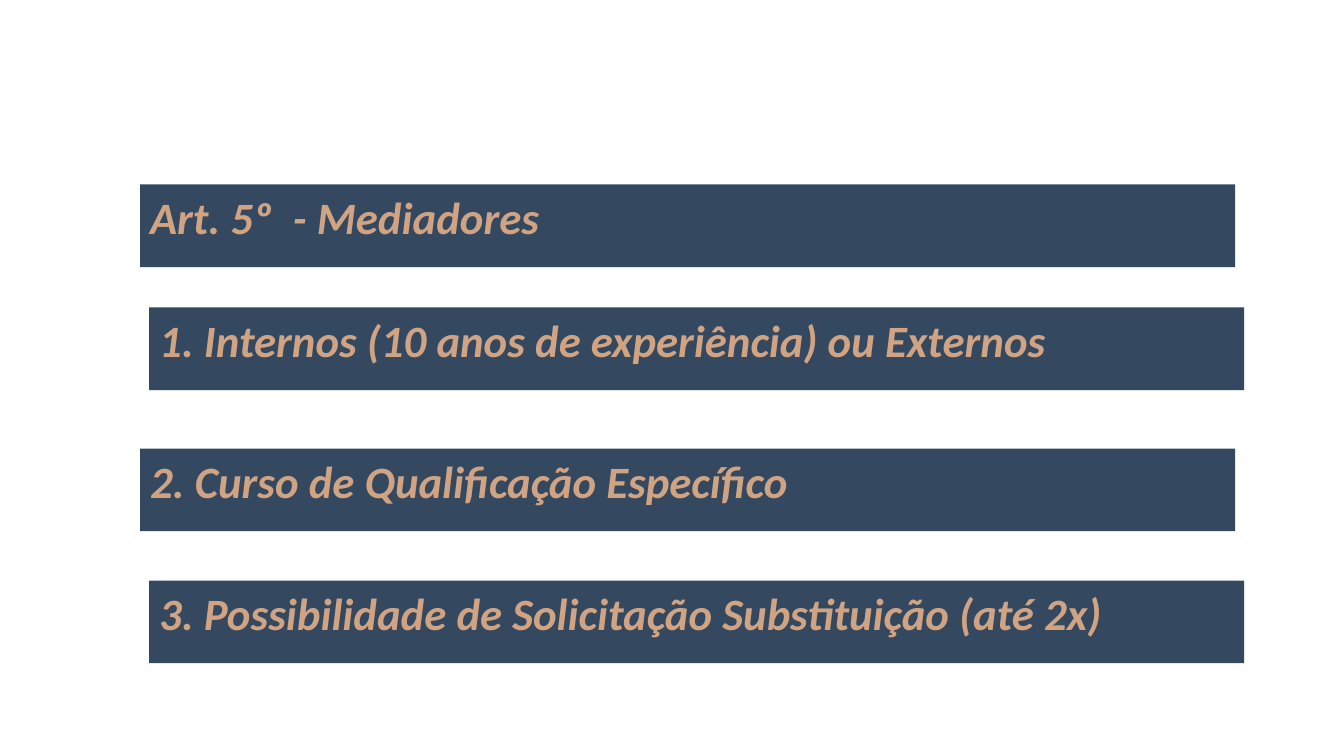
from lxml import etree
from pptx import Presentation
from pptx.dml.color import RGBColor
from pptx.enum.shapes import MSO_SHAPE
from pptx.enum.text import MSO_ANCHOR, PP_ALIGN
from pptx.oxml.ns import qn
from pptx.util import Emu, Pt

RECTANGLE = MSO_SHAPE.RECTANGLE
TOP = MSO_ANCHOR.TOP
LEFT = PP_ALIGN.LEFT
EMU_PER_PX = 9144  # 100 px to the inch


def px(length):
    return Emu(length * EMU_PER_PX)


def rgb(value):
    return RGBColor.from_string(value)


class ArticleSlide:
    FONT, SIZE = "Calibri", 32
    NAVY, SAND = "0B233F", "D0A482"
    OPACITY = 83

    def __init__(self, presentation):
        blank = presentation.slide_layouts[6]
        self.slide = presentation.slides.add_slide(blank)

    def banner(self, left, top, width, height, wording):
        """Translucent bar with one line of text at its top left."""
        bar = self.slide.shapes.add_shape(
            RECTANGLE, px(left), px(top), px(width), px(height))
        bar.shadow.inherit = False
        bar.line.fill.background()
        bar.fill.solid()
        bar.fill.fore_color.rgb = rgb(self.NAVY)
        fill_colour = bar.fill._xPr.find(qn("a:solidFill"))[0]
        etree.SubElement(fill_colour, qn("a:alpha"), val=str(self.OPACITY * 1000))

        frame = bar.text_frame
        frame.word_wrap = True
        frame.vertical_anchor = TOP
        line = frame.paragraphs[0]
        line.alignment = LEFT
        run = line.add_run()
        run.text = wording
        run.font.name = self.FONT
        run.font.size = Pt(self.SIZE)
        run.font.bold = run.font.italic = True
        run.font.color.rgb = rgb(self.SAND)


def main():
    presentation = Presentation()
    presentation.slide_width, presentation.slide_height = px(1333), px(750)
    article = ArticleSlide(presentation)

    # Heading and its three points, alternately shifted to the right
    margin, shift = 139, 9
    provisions = [
        (183, "Art. 5º  - Mediadores"),
        (305, "1. Internos (10 anos de experiência) ou Externos"),
        (445, "2. Curso de Qualificação Específico"),
        (576, "3. Possibilidade de Solicitação Substituição (até 2x)"),
    ]
    for index, (top, wording) in enumerate(provisions):
        article.banner(margin + index % 2 * shift, top, 1086, 82, wording)

    presentation.save("out.pptx")


if __name__ == "__main__":
    main()
